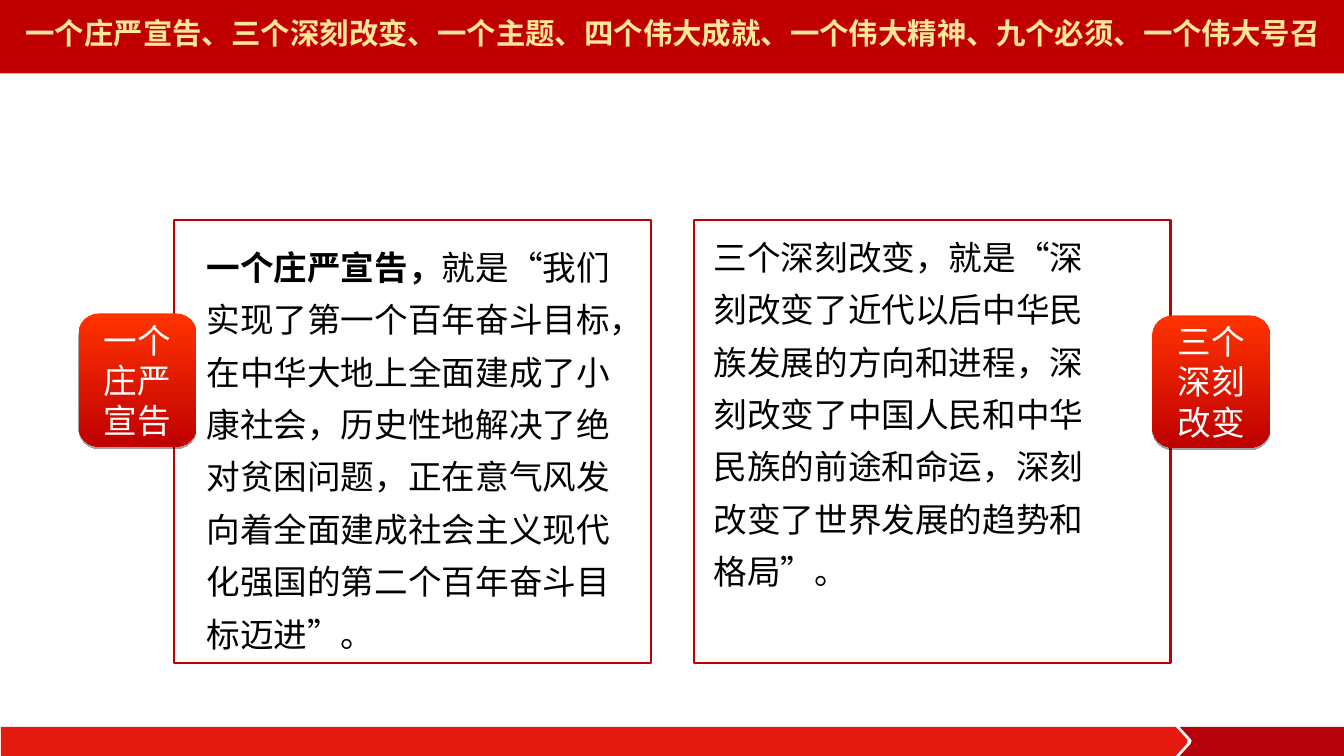
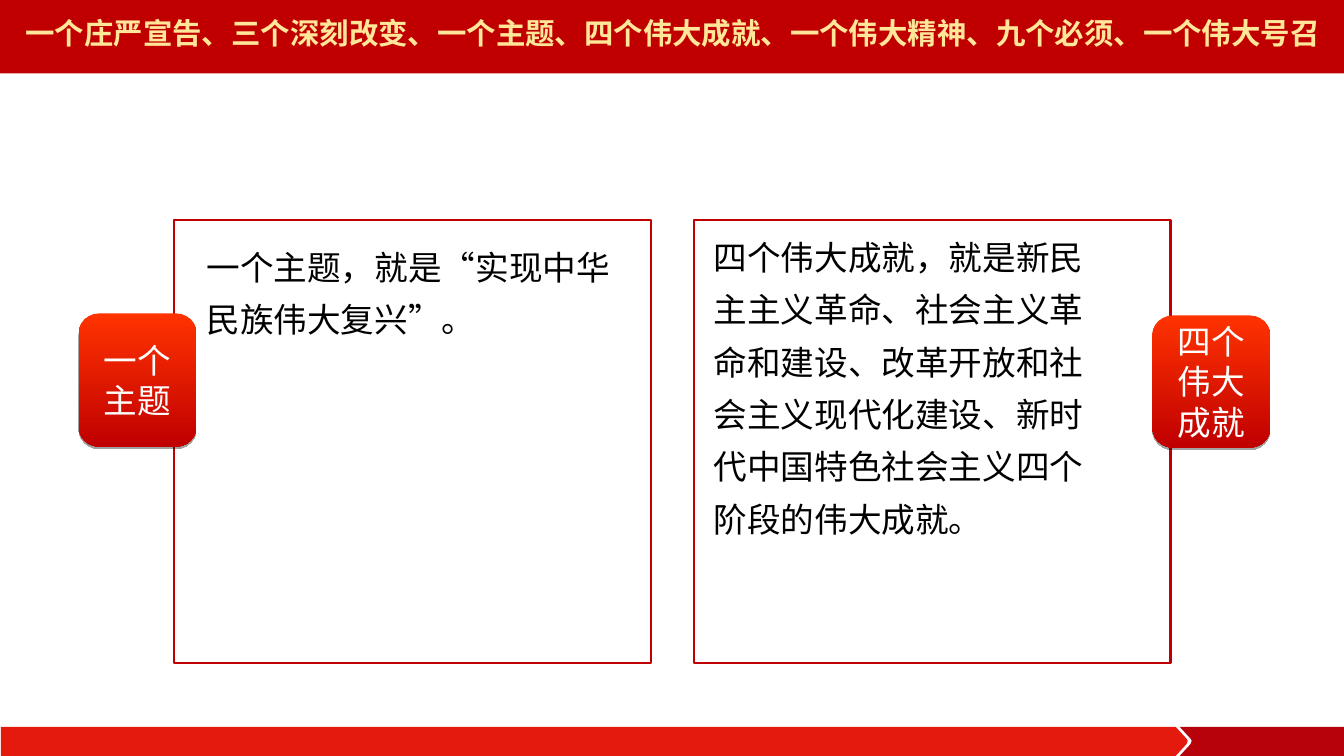
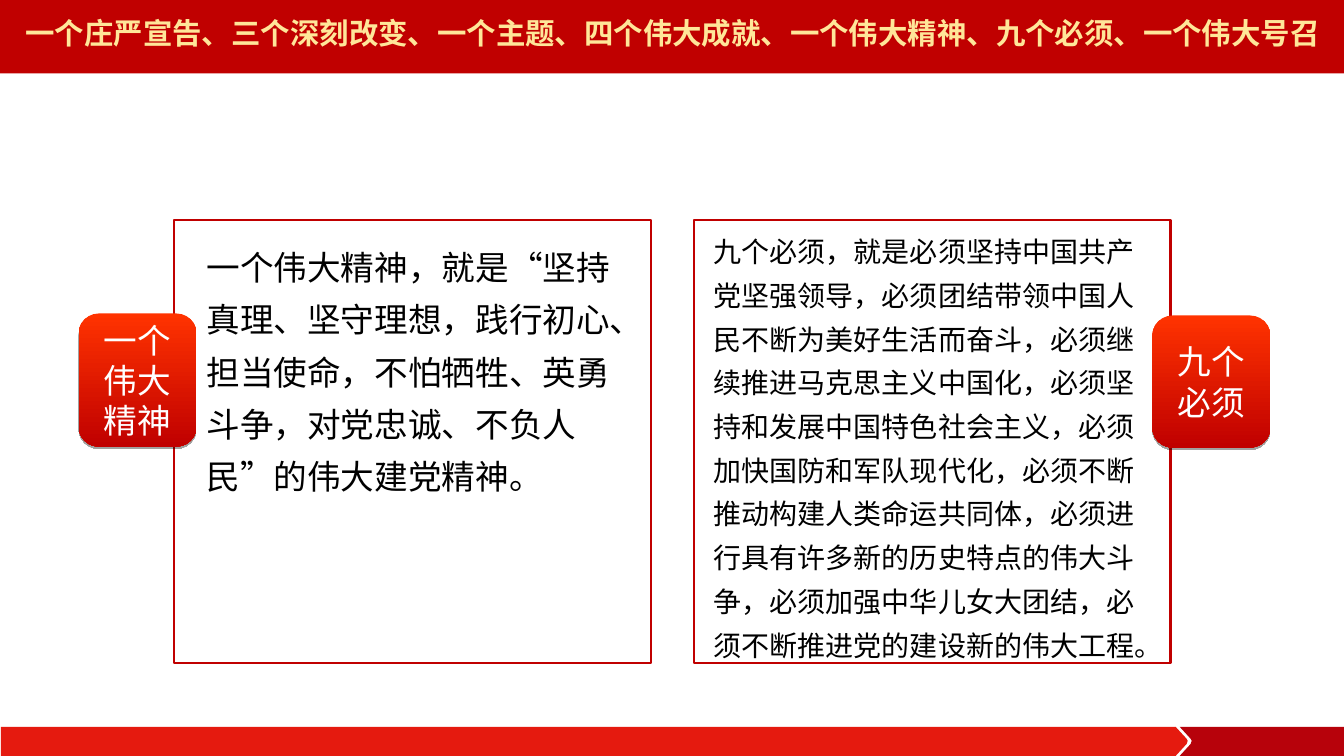
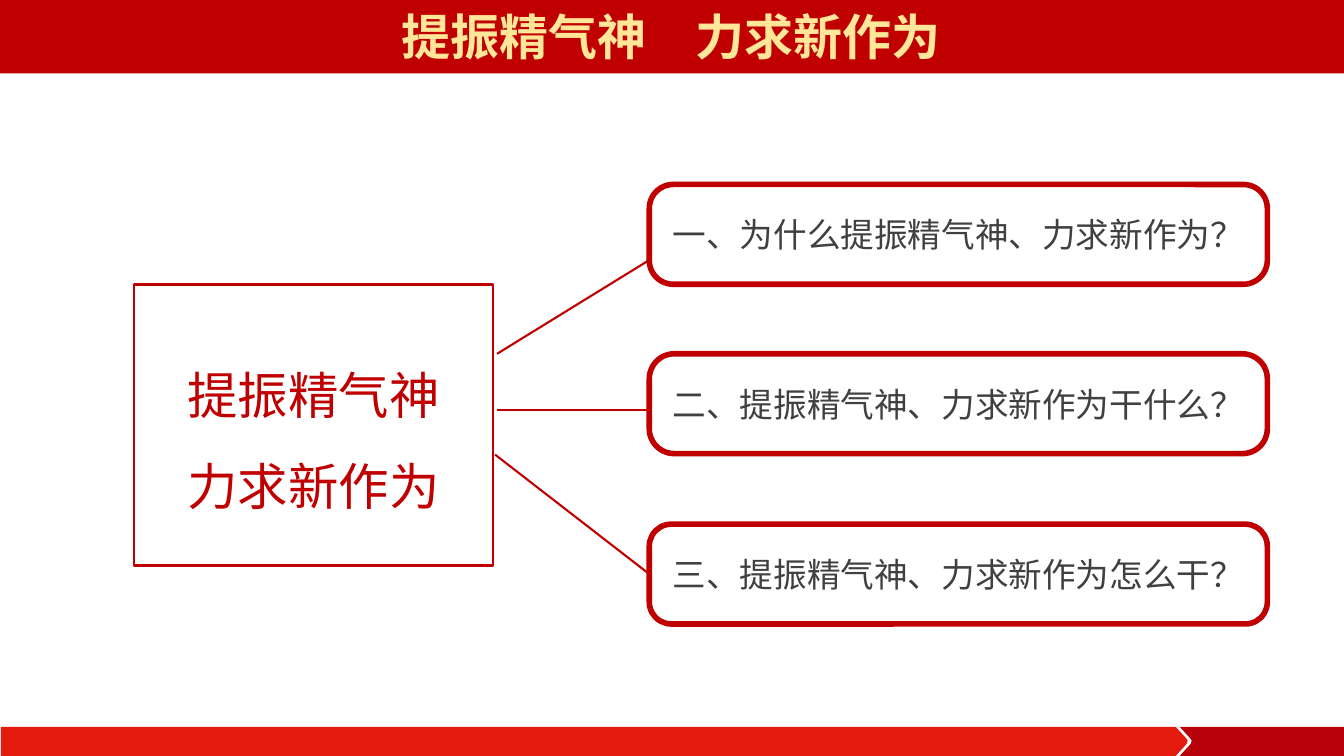
from lxml import etree
from pptx import Presentation
from pptx import util as u
from pptx.dml import color
from pptx.enum import shapes, text
from pptx.oxml import ns

ALIGN = text.PP_ALIGN
ANCHOR = text.MSO_ANCHOR
KIND = shapes.MSO_SHAPE
TOPIC = "一个庄严宣告、三个深刻改变、一个主题、四个伟大成就、一个伟大精神、九个必须、一个伟大号召"

PAIRS = [
    (("一个庄严宣告", "一个庄严宣告，",
      "就是“我们实现了第一个百年奋斗目标，在中华大地上全面建成了小康社会，历史性地解决了绝对贫困问题，"
      "正在意气风发向着全面建成社会主义现代化强国的第二个百年奋斗目标迈进”。", 4.32, 4.3, 24),
     ("三个深刻改变", "",
      "三个深刻改变，就是“深刻改变了近代以后中华民族发展的方向和进程，深刻改变了中国人民和中华民族的前途和命运，"
      "深刻改变了世界发展的趋势和格局”。", 4.08, 3.77, 24)),
    (("一个主题", "", "一个主题，就是“实现中华民族伟大复兴”。", 4.32, 1.15, 24),
     ("四个伟大成就", "",
      "四个伟大成就，就是新民主主义革命、社会主义革命和建设、改革开放和社会主义现代化建设、"
      "新时代中国特色社会主义四个阶段的伟大成就。", 4.08, 3.25, 24)),
    (("一个伟大精神", "",
      "一个伟大精神，就是“坚持真理、坚守理想，践行初心、担当使命，不怕牺牲、英勇斗争，"
      "对党忠诚、不负人民”的伟大建党精神。", 4.32, 2.72, 24),
     ("九个必须", "",
      "九个必须，就是必须坚持中国共产党坚强领导，必须团结带领中国人民不断为美好生活而奋斗，"
      "必须继续推进马克思主义中国化，必须坚持和发展中国特色社会主义，必须加快国防和军队现代化，"
      "必须不断推动构建人类命运共同体，必须进行具有许多新的历史特点的伟大斗争，"
      "必须加强中华儿女大团结，必须不断推进党的建设新的伟大工程。", 4.56, 4.48, 20)),
]

ASKS = [
    ("一、为什么提振精气神、力求新作为？", 1.83, 0.24, 2.58, (4.93, 3.51)),
    ("二、提振精气神、力求新作为干什么？", 3.51, 0.25, 4.07, (4.93, 4.07)),
    ("三、提振精气神、力求新作为怎么干？", 5.2, 0.22, 5.7, (4.91, 4.51)),
]


def rgb(code):
    """Turn a hex string into a colour."""
    return color.RGBColor.from_string(code)


def place(*sides):
    """Turn inch values into lengths."""
    return [u.Inches(side) for side in sides]


class Deck:
    """Hold the style and the current slide."""

    red, gold, ink, gray, white = "C00000", "FFE699", "000000", "404040", "FFFFFF"
    face = "Noto Sans CJK SC"

    def __init__(self):
        """Start an empty wide deck."""
        self.prs = Presentation()
        self.prs.slide_width, self.prs.slide_height = place(13.33, 7.5)
        self.plan = self.prs.slide_layouts[5]

    def new(self, title, size, spot, face=face):
        """Add a slide with its title."""
        self.slide = self.prs.slides.add_slide(self.plan)
        if len(self.prs.slides) == 1:
            self.base()
        head = self.slide.shapes.title
        head.left, head.top, head.width, head.height = place(*spot)
        self.words(head, [title], size, self.gold, face=face, bold=True)

    def base(self):
        """Put the band and the footer on the layout."""
        for spare in list(self.plan.placeholders):
            if spare.placeholder_format.idx:
                spare.element.getparent().remove(spare.element)
        tip = [(11.77, 7.33), (11.78, 7.35), (11.77, 7.38), (11.66, 7.5)]
        notch = [(x + 0.04, y) for x, y in reversed(tip)]
        parts = [
            self.outline([(0.01, 7.21), (11.66, 7.21)] + tip + [(0.01, 7.5)], "E51A0F"),
            self.outline([(11.7, 7.21), (13.34, 7.21), (13.34, 7.5)] + notch, "B7020B"),
            self.shape(KIND.RECTANGLE, (0, -0.03, 13.33, 0.76), fill=self.red),
        ]
        for part in parts:
            self.plan.shapes.element.append(part.element)

    def paint(self, item, fill=None, line=None, width=1.5):
        """Set the fill and line of a shape."""
        item.shadow.inherit = False
        if fill:
            item.fill.solid()
            item.fill.fore_color.rgb = rgb(fill)
        else:
            item.fill.background()
        if line:
            item.line.color.rgb = rgb(line)
            item.line.width = u.Pt(width)
        else:
            item.line.fill.background()
        return item

    def outline(self, dots, fill):
        """Draw a closed outline through inch points."""
        dots = [place(*dot) for dot in dots]
        pen = self.slide.shapes.build_freeform(*dots[0])
        pen.add_line_segments(dots[1:])
        return self.paint(pen.convert_to_shape(), fill)

    def shape(self, kind, spot, adj=None, **look):
        """Draw a preset shape."""
        item = self.slide.shapes.add_shape(kind, *place(*spot))
        if adj:
            item.adjustments[0] = adj
        return self.paint(item, **look)

    def words(self, item, lines, size, ink, lead="", face=face, bold=False,
              align=ALIGN.CENTER, anchor=ANCHOR.MIDDLE, space=None,
              fit=text.MSO_AUTO_SIZE.NONE):
        """Fill a shape with paragraphs of one style."""
        frame = item.text_frame
        frame.word_wrap, frame.auto_size = True, fit
        frame.vertical_anchor = anchor
        for i, line in enumerate(lines):
            para = frame.add_paragraph() if i else frame.paragraphs[0]
            para.alignment = align
            if space:
                para.line_spacing = space
            if lead:
                run = para.add_run()
                run.text, run.font.bold = lead, True
            para.add_run().text = line
            font = para.font
            font.name, font.size, font.bold = face, u.Pt(size), bold
            font.color.rgb = rgb(ink)
            latin = next(para._p.pPr.iter(ns.qn("a:latin")))
            east = etree.Element(ns.qn("a:ea"), typeface=self.face)
            latin.addnext(east)

    def label(self, spot, lines, size, ink, **look):
        """Add a text box that grows with its text."""
        box = self.slide.shapes.add_textbox(*place(*spot))
        self.words(box, lines, size, ink, fit=text.MSO_AUTO_SIZE.SHAPE_TO_FIT_TEXT, **look)

    def badge(self, spot, name):
        """Draw a shaded red badge with a hard shadow."""
        item = self.shape(KIND.ROUNDED_RECTANGLE, spot, 0.17)
        item.fill.gradient()
        item.fill.gradient_angle = 270
        for stop, code in zip(item.fill.gradient_stops, ("FF3300", self.red)):
            stop.color.rgb = rgb(code)
        glow = item.element.spPr.find(ns.qn("a:effectLst"))
        cast = etree.SubElement(glow, ns.qn("a:outerShdw"), dist=str(u.Pt(1.6)),
                                dir="5400000", rotWithShape="0")
        tone = etree.SubElement(cast, ns.qn("a:srgbClr"), val=self.ink)
        etree.SubElement(tone, ns.qn("a:alpha"), val="37000")
        self.words(item, [name], 24, self.white)

    def link(self, start, end, box=None):
        """Draw a thin red line, joined to a box's left side if given."""
        line = self.slide.shapes.add_connector(
            shapes.MSO_CONNECTOR.STRAIGHT, *place(*start, *end))
        line.line.color.rgb = rgb(self.red)
        line.line.width = u.Pt(1.5)
        etree.SubElement(line.element.spPr, ns.qn("a:effectLst"))
        if box is not None:
            line.begin_connect(box, 1)

    def pair(self, *cards):
        """Build a slide of two framed texts with badges."""
        self.new(TOPIC, 21, (0.01, 0.1, 13.32, 0.45))
        for left in (6.88, 1.73):
            self.shape(KIND.RECTANGLE, (left, 2.18, 4.73, 4.4), line=self.red)
        tabs = (0.78, 3.11, 1.17, 1.32), (11.43, 3.13, 1.17, 1.31)
        for spot, card in zip(tabs, cards):
            self.badge(spot, card[0])
        for spot, card in zip(((1.95, 2.28), (6.98, 2.18)), cards):
            _, lead, body, wide, high, size = card
            self.label((*spot, wide, high), [body], size, self.ink, lead=lead,
                       align=ALIGN.LEFT, anchor=ANCHOR.TOP, space=1.3)

    def tree(self):
        """Build the slide that leads from a theme to its questions."""
        self.new("提振精气神　力求新作为", 35, (-0.01, 0.01, 13.34, 0.69), "Calibri")
        boxes = []
        for ask, top, adj, *_ in ASKS:
            box = self.shape(KIND.ROUNDED_RECTANGLE, (6.44, top, 6.13, 0.99), adj,
                             line=self.red, width=4)
            self.words(box, [ask], 24, self.gray)
            frame = box.text_frame
            frame.margin_left = frame.margin_right = u.Inches(0.13)
            frame.margin_top = frame.margin_bottom = u.Inches(0.07)
            boxes.append(box)
        for box, (_, top, _, y, end) in zip(boxes, ASKS):
            middle = abs(top + 0.99 / 2 - y) < 0.02
            self.link((6.44, y), end, box if middle else None)
        self.shape(KIND.RECTANGLE, (1.33, 2.82, 3.56, 2.79), line=self.red, width=2)
        self.label((1.5, 3.25, 3.22, 1.92), ["提振精气神", "力求新作为"], 36, self.red,
                   space=1.5)


def main():
    """Build and save the deck."""
    deck = Deck()
    for cards in PAIRS:
        deck.pair(*cards)
    deck.tree()
    deck.prs.save("out.pptx")


if __name__ == "__main__":
    main()
